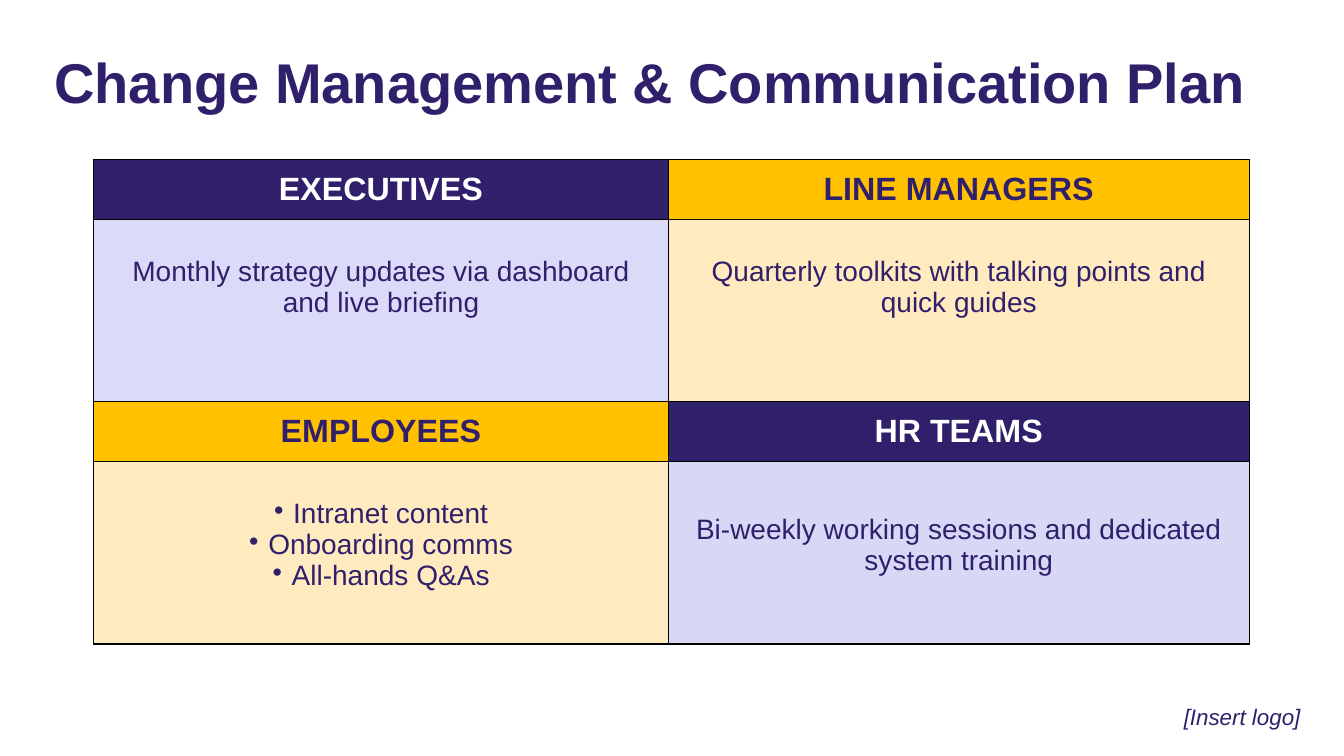
from dataclasses import dataclass

from lxml.etree import SubElement as Sub
from pptx import Presentation
from pptx.dml.color import RGBColor as Rgb
from pptx.enum.text import MSO_ANCHOR as Anchor, PP_ALIGN as Align
from pptx.oxml.ns import qn
from pptx.util import Inches, Pt


@dataclass(frozen=True)
class Theme:
    """Colours, font and type sizes of the deck."""
    font: str = "Arial"
    purple: str = "30206B"
    gold: str = "FFC100"
    lilac: str = "DBDBF9"
    lavender: str = "D7D7F6"
    cream: str = "FFEBBF"
    white: str = "FFFFFF"
    border: str = "000000"
    title: int = 40
    heading: int = 23
    body: int = 20
    note: int = 16


THEME = Theme()
COLUMNS = [5.7, 5.76]
ROWS = [0.6, 1.8, 0.6, 1.81]
AUDIENCES = [
    [
        dict(name="EXECUTIVES", head=THEME.purple, ink=THEME.white, fill=THEME.lilac,
             lines=["Monthly strategy updates via dashboard", "and live briefing"]),
        dict(name="LINE MANAGERS", head=THEME.gold, ink=THEME.purple, fill=THEME.cream,
             lines=["Quarterly toolkits with talking points and quick guides"]),
    ],
    [
        dict(name="EMPLOYEES", head=THEME.gold, ink=THEME.purple, fill=THEME.cream,
             lines=["Intranet content", "Onboarding comms", "All-hands Q&As"], bullet="•"),
        dict(name="HR TEAMS", head=THEME.purple, ink=THEME.white, fill=THEME.lavender,
             lines=["Bi-weekly working sessions and dedicated system training"], top=0.52),
    ],
]


def assign(target, formats):
    """Set each named attribute on the target."""
    for name, value in formats.items():
        setattr(target, name, value)


class PlanPage:
    """Holds the theme and the current slide, and draws elements on it."""

    def __init__(self, page, theme):
        self.page = page
        self.theme = theme

    def fill_text(self, frame, lines, color, align=Align.CENTER, bullet=None, **font):
        """Fill a text frame with one paragraph per line."""
        for index, line in enumerate(lines):
            para = frame.add_paragraph() if index else frame.paragraphs[0]
            para.alignment = align
            if bullet:
                props = para._p.get_or_add_pPr()
                props.set("marL", str(Inches(0.19)))
                props.set("indent", str(-Inches(0.19)))
                Sub(props, qn("a:buChar"), char=bullet)
            span = para.add_run()
            span.text = line
            assign(span.font, {"name": self.theme.font, **font})
            span.font.color.rgb = Rgb.from_string(color)

    def text(self, place, line, align, **font):
        """Add a text box without insets."""
        box = self.page.shapes.add_textbox(*map(Inches, place))
        frame = box.text_frame
        assign(frame, dict(word_wrap=True, vertical_anchor=Anchor.MIDDLE, margin_left=0,
                           margin_right=0, margin_top=0, margin_bottom=0))
        self.fill_text(frame, [line], self.theme.purple, align, **font)
        frame.paragraphs[0].line_spacing = 0.9

    def paint(self, cell, fill):
        """Give a cell its borders and fill."""
        props = cell._tc.get_or_add_tcPr()
        for side in ("lnL", "lnR", "lnT", "lnB"):
            line = Sub(props, qn(f"a:{side}"), w=str(Pt(1)))
            Sub(Sub(line, qn("a:solidFill")), qn("a:srgbClr"), val=self.theme.border)
        cell.fill.solid()
        cell.fill.fore_color.rgb = Rgb.from_string(fill)

    def table(self, left, top, audiences):
        """Add the grid of audiences, each a heading cell above a body cell."""
        table = self.page.shapes.add_table(
            len(ROWS), len(COLUMNS), Inches(left), Inches(top),
            Inches(sum(COLUMNS)), Inches(sum(ROWS))).table
        assign(table, dict(first_row=False, horz_banding=False))
        for column, width in zip(table.columns, COLUMNS):
            column.width = Inches(width)
        for row, height in zip(table.rows, ROWS):
            row.height = Inches(height)
        for band, pair in enumerate(audiences):
            for column, audience in enumerate(pair):
                head = table.cell(2 * band, column)
                self.paint(head, audience["head"])
                head.vertical_anchor = Anchor.MIDDLE
                self.fill_text(head.text_frame, [audience["name"]], audience["ink"],
                               size=Pt(self.theme.heading), bold=True)
                body = table.cell(2 * band + 1, column)
                self.paint(body, audience["fill"])
                body.margin_top = Inches(audience.get("top", 0.36))
                self.fill_text(body.text_frame, audience["lines"], self.theme.purple,
                               bullet=audience.get("bullet"),
                               size=Pt(self.theme.body), bold=False)


def main():
    """Build the deck and save it."""
    deck = Presentation()
    assign(deck, dict(slide_width=Inches(13.33), slide_height=Inches(7.5)))
    plan = PlanPage(deck.slides.add_slide(deck.slide_layouts[6]), THEME)
    plan.text((0.54, 0.52, 12.27, 0.66), "Change Management & Communication Plan",
              Align.LEFT, size=Pt(THEME.title), bold=True)
    plan.table(0.93, 1.58, AUDIENCES)
    plan.text((11.55, 6.91, 1.54, 0.44), "[Insert logo]",
              Align.CENTER, size=Pt(THEME.note), italic=True)
    deck.save("out.pptx")


if __name__ == "__main__":
    main()
